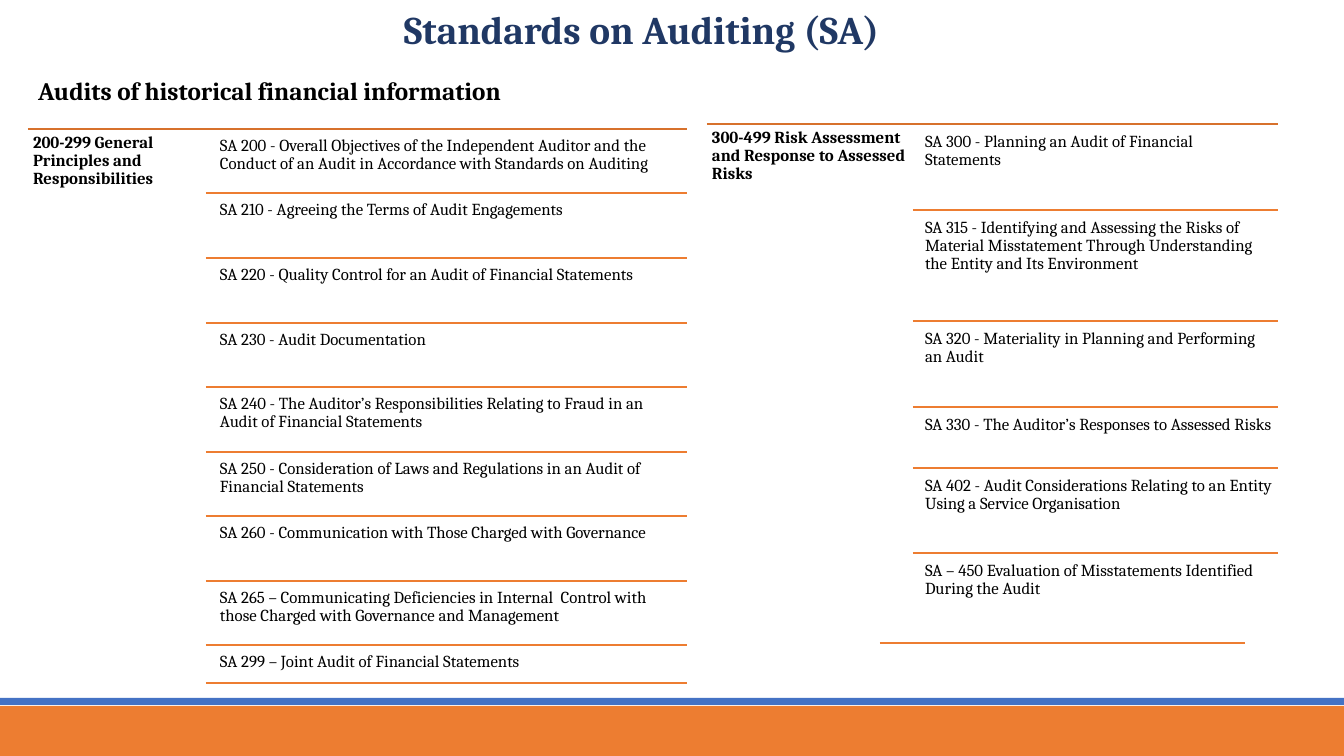
"""Build a slide listing the Standards on Auditing in two ruled columns."""
from lxml import etree
from pptx import Presentation
from pptx.dml.color import RGBColor
from pptx.enum.shapes import MSO_CONNECTOR, MSO_SHAPE
from pptx.enum.text import MSO_ANCHOR, MSO_AUTO_SIZE, PP_ALIGN
from pptx.oxml.ns import qn
from pptx.util import Pt

STRAIGHT, RECTANGLE = MSO_CONNECTOR.STRAIGHT, MSO_SHAPE.RECTANGLE
TOP, LEFT, NO_FIT = MSO_ANCHOR.TOP, PP_ALIGN.LEFT, MSO_AUTO_SIZE.NONE

THEME = {
    "font": "Cambria",
    "title_size": 28, "subtitle_size": 18, "item_size": 12,
    "navy": "203864", "black": "000000",
    "orange": "ED7D31", "dark_orange": "D7712C", "blue": "4472C4",
    "rule_width": 1.25,
}
PX = 914400 / 100.8
INSET = 5

COLUMNS = [
    {
        "heading": "200-299 General Principles and Responsibilities",
        "left": 28, "right": 687, "top": 129, "heading_width": 178,
        "item_left": 215, "item_gap": 3, "last_shift": 0,
        "items": [
            ("SA 200 - Overall Objectives of the Independent Auditor and the "
             "Conduct of an Audit in Accordance with Standards on Auditing", 64),
            ("SA 210 - Agreeing the Terms of Audit Engagements", 65),
            ("SA 220 - Quality Control for an Audit of Financial Statements", 65),
            ("SA 230 - Audit Documentation", 64),
            ("SA 240 - The Auditor’s Responsibilities Relating to Fraud in an "
             "Audit of Financial Statements", 65),
            ("SA 250 - Consideration of Laws and Regulations in an Audit of "
             "Financial Statements", 64),
            ("SA 260 - Communication with Those Charged with Governance", 65),
            ("SA 265 – Communicating Deficiencies in Internal  Control with "
             "those Charged with Governance and Management", 64),
            ("SA 299 – Joint Audit of Financial Statements", 38),
        ],
    },
    {
        "heading": "300-499 Risk Assessment and Response to Assessed Risks",
        "left": 707, "right": 1278, "top": 124, "heading_width": 206,
        "item_left": 920, "item_gap": 4, "last_shift": -33,
        "items": [
            ("SA 300 - Planning an Audit of Financial Statements", 86),
            ("SA 315 - Identifying and Assessing the Risks of Material "
             "Misstatement Through Understanding the Entity and Its "
             "Environment", 111),
            ("SA 320 - Materiality in Planning and Performing an Audit", 86),
            ("SA 330 - The Auditor’s Responses to Assessed Risks", 61),
            ("SA 402 - Audit Considerations Relating to an Entity Using a "
             "Service Organisation", 85),
            ("SA – 450 Evaluation of Misstatements Identified During the "
             "Audit", 90),
        ],
    },
]


def write(holder, box, text, size, color="black", bold=False, inset=INSET, spacing=1.0):
    """Place a text holder and fill it with one formatted run."""
    holder.left, holder.top, holder.width, holder.height = [round(v * PX) for v in box]
    frame = holder.text_frame
    frame.word_wrap, frame.auto_size, frame.vertical_anchor = True, NO_FIT, TOP
    frame.margin_left = frame.margin_right = round(inset * PX)
    frame.margin_top = frame.margin_bottom = round(INSET * PX)
    paragraph = frame.paragraphs[0]
    paragraph.alignment, paragraph.line_spacing = LEFT, spacing
    paragraph.space_before = Pt(0)
    run = paragraph.add_run()
    run.text = text
    run.font.name, run.font.size, run.font.bold = THEME["font"], Pt(size), bold
    run.font.color.rgb = RGBColor.from_string(THEME[color])
    return paragraph


def rule(left, right, y, color="orange"):
    """Draw a horizontal rule."""
    line = slide.shapes.add_connector(
        STRAIGHT, *[round(v * PX) for v in (left, y, right, y)])
    line.line.color.rgb = RGBColor.from_string(THEME[color])
    line.line.width = Pt(THEME["rule_width"])
    etree.SubElement(line._element.spPr, qn("a:effectLst"))


prs = Presentation()
prs.slide_width, prs.slide_height = round(1344 * PX), round(756 * PX)
slide = prs.slides.add_slide(prs.slide_layouts[1])

for bar_top, bar_height, bar_color in [(706, 50, "orange"), (698, 7, "blue")]:
    bar = slide.shapes.add_shape(
        RECTANGLE, *[round(v * PX) for v in (0, bar_top, 1344, bar_height)])
    bar.shadow.inherit = False
    bar.fill.solid()
    bar.fill.fore_color.rgb = RGBColor.from_string(THEME[bar_color])
    bar.line.fill.background()

write(slide.shapes.title, (394, 0, 766, 57), "Standards on Auditing (SA)",
      THEME["title_size"], "navy", bold=True, inset=10)
subtitle = write(slide.placeholders[1], (28, 70, 677, 40),
                 "Audits of historical financial information",
                 THEME["subtitle_size"], bold=True, inset=10)
subtitle_format = subtitle._p.get_or_add_pPr()
subtitle_format.set("marL", "0")
subtitle_format.set("indent", "0")
etree.SubElement(subtitle_format, qn("a:buNone"))

for column in COLUMNS:
    left, right, y = column["left"], column["right"], column["top"]
    rule(left, right, y, "dark_orange")
    column_height = sum(height for _, height in column["items"])
    write(slide.shapes.add_textbox(0, 0, 0, 0),
          (left, y, column["heading_width"], column_height),
          column["heading"], THEME["item_size"], bold=True, spacing=0.9)
    rule_left = left + column["heading_width"]
    for number, (standard, height) in enumerate(column["items"], 1):
        write(slide.shapes.add_textbox(0, 0, 0, 0),
              (column["item_left"], y + column["item_gap"],
               right - column["item_left"], height - column["item_gap"]),
              standard, THEME["item_size"], spacing=0.9)
        y += height
        shift = column["last_shift"] if number == len(column["items"]) else 0
        rule(rule_left + shift, right + shift, y)

prs.save("out.pptx")
